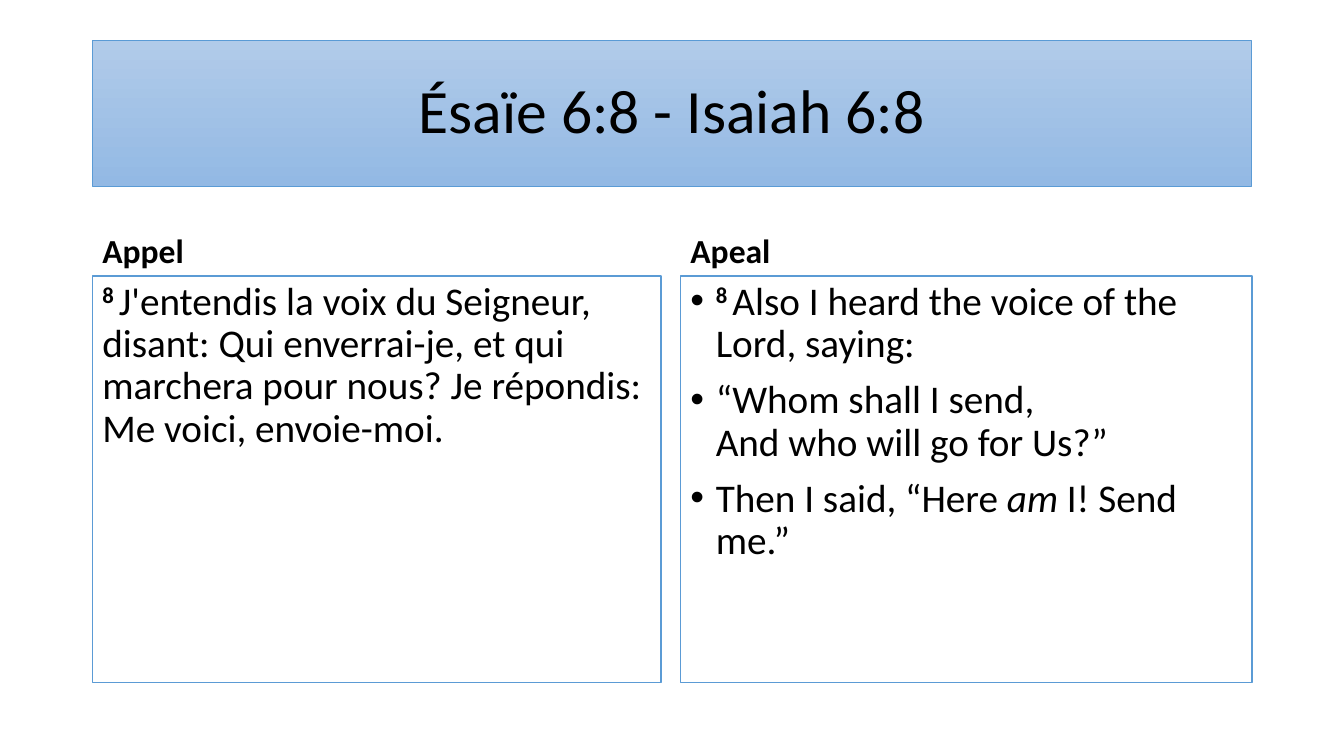
"""Build a bilingual slide of Isaiah 6:8 with a French and an English column."""
from lxml import etree
from pptx import Presentation
from pptx import util as u
from pptx.dml.color import RGBColor
from pptx.enum import shapes, text
from pptx.oxml.ns import qn

TITLE = "Ésaïe 6:8 - Isaiah 6:8"
VERSE_NUMBER = ("8 ", "number")
COLUMNS = [
    {"heading": "Appel", "left": 2.33, "width": 14.33, "bullet": False, "verse": [
        [VERSE_NUMBER, ("J'entendis la voix du Seigneur, disant: Qui enverrai-je, et qui "
                        "marchera pour nous? Je répondis: Me voici, envoie-moi.", "plain")],
    ]},
    {"heading": "Apeal", "left": 17.15, "width": 14.4, "bullet": True, "verse": [
        [VERSE_NUMBER, ("Also I heard the voice of the Lord, saying:", "plain")],
        [("“Whom shall I send,\nAnd who will go for Us?”", "plain")],
        [("Then I said, “Here ", "plain"), ("am", "emphasis"), (" I! Send me.”", "plain")],
    ]},
]

BLACK = RGBColor(0x00, 0x00, 0x00)
WHITE = RGBColor(0xFF, 0xFF, 0xFF)
BLUE = RGBColor(0x5B, 0x9B, 0xD5)
TITLE_TOP = RGBColor(0xB1, 0xCB, 0xE9)
TITLE_BOTTOM = RGBColor(0x93, 0xB9, 0xE4)

FORMATS = {
    "title": {"size": u.Pt(44)},
    "heading": {"size": u.Pt(24), "bold": True},
    "number": {"size": u.Pt(28), "bold": True},
    "plain": {"size": u.Pt(28)},
    "emphasis": {"size": u.Pt(28), "italic": True},
}
TITLE_PARA = {"alignment": text.PP_ALIGN.CENTER, "line_spacing": 0.9}
BODY_PARA = {"alignment": text.PP_ALIGN.LEFT, "line_spacing": 0.9, "space_before": u.Pt(10)}

MARGIN, TITLE_Y, TITLE_WIDTH, TITLE_HEIGHT = 2.33, 1.01, 29.21, 3.68
HEADING_Y, HEADING_HEIGHT, VERSE_HEIGHT = 4.67, 2.29, 10.24
INDENT = u.Cm(0.64)


def assign(target, values):
    """Set each named attribute on the target."""
    for name, value in values.items():
        setattr(target, name, value)


def add_bullet(para):
    """Give the paragraph a hanging round bullet."""
    properties = para._p.get_or_add_pPr()
    properties.set("marL", str(INDENT))
    properties.set("indent", str(-INDENT))
    etree.SubElement(properties, qn("a:buFont")).set("typeface", "Arial")
    etree.SubElement(properties, qn("a:buChar")).set("char", "•")


def write(box, paragraphs, para_format, anchor, bullet=False):
    """Fill the box with paragraphs of (wording, format name) spans."""
    frame = box.text_frame
    assign(frame, {"word_wrap": True, "vertical_anchor": anchor})
    for index, spans in enumerate(paragraphs):
        para = frame.add_paragraph() if index else frame.paragraphs[0]
        assign(para, para_format)
        if bullet:
            add_bullet(para)
        for wording, kind in spans:
            for row, line in enumerate(wording.split("\n")):
                if row:
                    para.add_line_break()
                span = para.add_run()
                span.text = line
                assign(span.font, {"name": "Calibri", **FORMATS[kind]})
                span.font.color.rgb = BLACK
                if kind == "number":
                    span.font._element.set("baseline", "30000")


def add_panel(page, place, line_width):
    """Add a blue-outlined rectangle."""
    panel = page.shapes.add_shape(shapes.MSO_SHAPE.RECTANGLE, *map(u.Cm, place))
    panel.shadow.inherit = False
    panel.line.color.rgb = BLUE
    panel.line.width = u.Pt(line_width)
    return panel


def main():
    """Draw the title and both columns, then save."""
    deck = Presentation()
    assign(deck, {"slide_width": u.Cm(33.87), "slide_height": u.Cm(19.05)})
    page = deck.slides.add_slide(deck.slide_layouts[6])

    title = add_panel(page, (MARGIN, TITLE_Y, TITLE_WIDTH, TITLE_HEIGHT), 0.5)
    title.fill.gradient()
    title.fill.gradient_angle = 270
    for stop, color in zip(title.fill.gradient_stops, (TITLE_TOP, TITLE_BOTTOM)):
        stop.color.rgb = color
    write(title, [[(TITLE, "title")]], TITLE_PARA, text.MSO_ANCHOR.MIDDLE)

    for column in COLUMNS:
        left, width = column["left"], column["width"]
        heading = page.shapes.add_textbox(*map(u.Cm, (left, HEADING_Y, width, HEADING_HEIGHT)))
        write(heading, [[(column["heading"], "heading")]], BODY_PARA, text.MSO_ANCHOR.BOTTOM)
        verse = add_panel(page, (left, HEADING_Y + HEADING_HEIGHT, width, VERSE_HEIGHT), 1)
        verse.fill.solid()
        verse.fill.fore_color.rgb = WHITE
        write(verse, column["verse"], BODY_PARA, text.MSO_ANCHOR.TOP, column["bullet"])

    deck.save("out.pptx")


if __name__ == "__main__":
    main()
